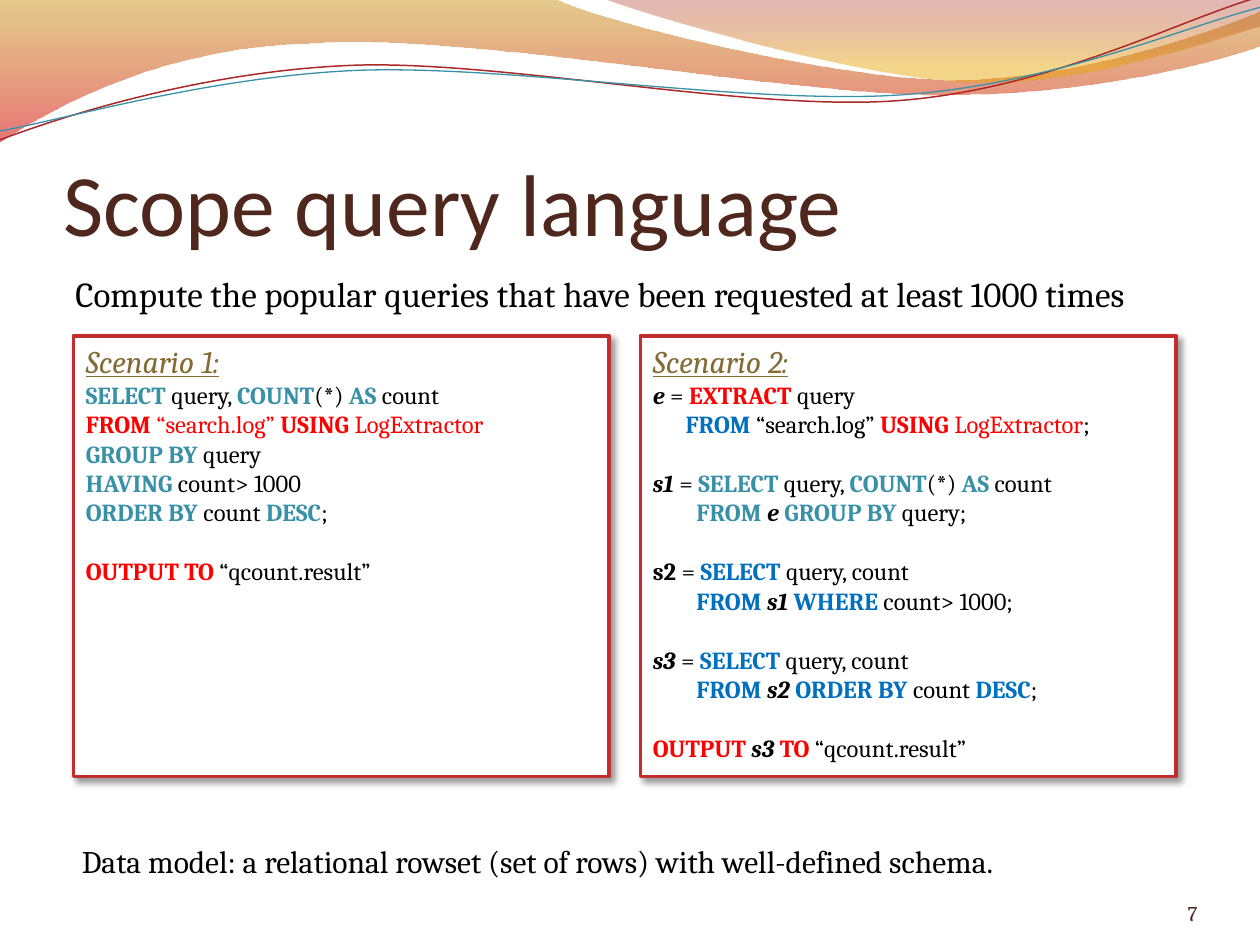
from typing import NamedTuple

from lxml.etree import Element, SubElement
from pptx import Presentation
from pptx.dml.color import RGBColor
from pptx.enum.shapes import MSO_SHAPE
from pptx.enum.text import MSO_ANCHOR as Anchor, MSO_AUTO_SIZE as AutoSize, PP_ALIGN as Align
from pptx.oxml.ns import qn
from pptx.util import Cm, Pt

BLACK = RGBColor(0, 0, 0)
WHITE = RGBColor(0xFF, 0xFF, 0xFF)
BROWN = RGBColor(0x4F, 0x27, 0x1C)
DARK_BROWN = RGBColor(0x4B, 0x25, 0x1B)
OLIVE = RGBColor(0x83, 0x6B, 0x33)
TEAL = RGBColor(0x38, 0x91, 0xA7)
BLUE = RGBColor(0x00, 0x70, 0xC0)
RED = RGBColor(0xFF, 0, 0)
BORDER_RED = RGBColor(0xC3, 0x2D, 0x2E)
LINE_RED = RGBColor(0xAC, 0x28, 0x29)
GOLD = RGBColor(0xC3, 0x8B, 0x00)
SCARLET = RGBColor(0xD6, 0x03, 0x05)
MAROON = RGBColor(0xA1, 0x11, 0x12)
AMBER = RGBColor(0xE9, 0xA6, 0x00)

SERIF, SANS = "Cambria", "Calibri"
LINE_GAP = Pt(16.8)  # one empty code line


class Style(NamedTuple):
    color: RGBColor = BLACK
    bold: bool = False
    italic: bool = False


class Statement(NamedTuple):
    """Lines of (text, Style) pairs; lines after the first are indented, in cm."""
    lines: list
    hanging: float = 0
    gap: bool = True


class Stop(NamedTuple):
    position: float
    color: RGBColor
    opacity: int


class Wave(NamedTuple):
    """Points in cm; a segment of one point is straight, of three a Bézier curve."""
    start: tuple
    segments: list
    stops: tuple = ()
    line: RGBColor | None = None
    width: float = 0


PLAIN, NAME, LABEL = Style(), Style(bold=True, italic=True), Style(bold=True)
TEAL_KEY, BLUE_KEY, RED_KEY = Style(TEAL, True), Style(BLUE, True), Style(RED, True)
RED_TEXT = Style(RED)

WAVES = [
    Wave((0, 0), [
        [(11.18, -0.03)],
        [(12.09, 0.43), (16.87, 1.6), (19.25, 1.6)],
        [(21.67, 1.6), (24.33, 0.66), (25.4, 0.23)],
        [(25.43, 0.91)],
        [(24.97, 1.12), (22.1, 1.93), (18.95, 1.91)],
        [(15.8, 1.91), (9.7, 0.71), (6.53, 0.86)],
        [(3.28, 0.91), (1.17, 2.11), (-0.03, 2.87)],
    ], stops=(Stop(0, GOLD, 45), Stop(1, SCARLET, 55))),
    Wave((12.17, -0.03), [
        [(12.93, 0.28), (17.32, 1.57), (19.53, 1.65)],
        [(21.74, 1.75), (24.41, 0.81), (25.4, 0.53)],
        [(25.4, 0)],
    ], stops=(Stop(0, MAROON, 30), Stop(0.8, AMBER, 45))),
    Wave((0, 2.82), [
        [(1.22, 2.36), (4.01, 1.45), (7.04, 1.32)],
        [(10.03, 1.19), (15.06, 2.26), (18.11, 2.03)],
        [(21.16, 1.8), (23.83, 0.38), (25.35, -0.05)],
    ], line=LINE_RED, width=0.85),
    Wave((0, 2.64), [
        [(1.19, 2.44), (4.17, 1.55), (7.19, 1.42)],
        [(10.24, 1.3), (15.16, 2.13), (18.21, 1.91)],
        [(21.23, 1.7), (23.9, 0.53), (25.4, 0.15)],
    ], line=TEAL, width=0.75),
]

SELECT_COUNT = [("SELECT", TEAL_KEY), (" query, ", PLAIN), ("COUNT", TEAL_KEY),
                ("(*) ", PLAIN), ("AS", TEAL_KEY), (" count", PLAIN)]
SELECT_QUERY = [(" = ", PLAIN), ("SELECT", BLUE_KEY), (" query, count", PLAIN)]
RESULT_FILE = "“qcount.result”"

SCENARIOS = {
    "Scenario 1:": [
        Statement([
            SELECT_COUNT,
            [("FROM", RED_KEY), (" “search.log” ", RED_TEXT),
             ("USING ", RED_KEY), ("LogExtractor", RED_TEXT)],
            [("GROUP BY", TEAL_KEY), (" query", PLAIN)],
            [("HAVING", TEAL_KEY), (" count> 1000", PLAIN)],
            [("ORDER BY ", TEAL_KEY), ("count ", PLAIN), ("DESC", TEAL_KEY), (";", PLAIN)],
        ], gap=False),
        Statement([[("OUTPUT TO ", RED_KEY), (RESULT_FILE, PLAIN)]]),
    ],
    "Scenario 2:": [
        Statement([
            [("e", NAME), (" = ", PLAIN), ("EXTRACT", RED_KEY), (" query", PLAIN)],
            [("FROM", BLUE_KEY), (" “search.log” ", PLAIN), ("USING ", RED_KEY),
             ("LogExtractor", RED_TEXT), (";", PLAIN)],
        ], hanging=0.66, gap=False),
        Statement([
            [("s1 ", NAME), ("= ", PLAIN), *SELECT_COUNT],
            [("FROM ", TEAL_KEY), ("e ", NAME), ("GROUP BY", TEAL_KEY), (" query;", PLAIN)],
        ], hanging=0.88),
        Statement([
            [("s2", LABEL), *SELECT_QUERY],
            [("FROM ", BLUE_KEY), ("s1", NAME), (" WHERE", BLUE_KEY), (" count> 1000;", PLAIN)],
        ], hanging=0.88),
        Statement([
            [("s3", NAME), *SELECT_QUERY],
            [("FROM ", BLUE_KEY), ("s2 ", NAME), ("ORDER BY", BLUE_KEY), (" count ", PLAIN),
             ("DESC", BLUE_KEY), (";", PLAIN)],
        ], hanging=0.88),
        Statement([[("OUTPUT ", RED_KEY), ("s3 ", NAME), ("TO", RED_KEY),
                    (" " + RESULT_FILE, PLAIN)]]),
    ],
}


def draw_wave(shapes, wave: Wave) -> None:
    builder = shapes.build_freeform(*(Cm(v) for v in wave.start))
    ends = [segment[-1] for segment in wave.segments]
    builder.add_line_segments([(Cm(x), Cm(y)) for x, y in ends], close=bool(wave.stops))
    band = builder.convert_to_shape()
    # Bend the segments that have control points
    for step, segment in zip(list(band._element.iter(qn("a:lnTo"))), wave.segments):
        if len(segment) == 3:
            step.tag = qn("a:cubicBezTo")
            for index, (x, y) in enumerate(segment[:2]):
                step.insert(index, Element(qn("a:pt"), x=str(Cm(x) - band.left),
                                           y=str(Cm(y) - band.top)))
    band.shadow.inherit = False
    if not wave.stops:
        band.fill.background()
        band.line.color.rgb = wave.line
        band.line.width = Pt(wave.width)
        return
    band.line.fill.background()
    band.fill.gradient()
    band.fill.gradient_angle = 270
    for target, stop in zip(band.fill.gradient_stops, wave.stops):
        target.position = stop.position
        target.color.rgb = stop.color
    for color, stop in zip(band._element.spPr.iter(qn("a:srgbClr")), wave.stops):
        SubElement(color, qn("a:alpha"), val=str(stop.opacity * 1000))


def set_font(paragraph, size: float, color: RGBColor = BLACK, name: str = SERIF) -> None:
    font = paragraph.font
    font.name, font.size, font.color.rgb = name, Pt(size), color


def add_text(shapes, box: tuple, text: str, size: float, color: RGBColor = BLACK):
    frame = shapes.add_textbox(*(Cm(v) for v in box)).text_frame
    frame.word_wrap = True
    frame.text = text
    set_font(frame.paragraphs[0], size, color)
    return frame


def add_statement(frame, statement: Statement) -> None:
    code = frame.add_paragraph()
    code.alignment = Align.LEFT
    code.space_before = LINE_GAP if statement.gap else Pt(0)
    set_font(code, 14)
    indent = Cm(statement.hanging)
    properties = code._p.get_or_add_pPr()
    properties.set("marL", str(indent))
    properties.set("indent", str(-indent))
    for index, line in enumerate(statement.lines):
        if index:
            code.add_line_break()
        for text, style in line:
            run = code.add_run()
            run.text = text
            run.font.color.rgb = style.color
            run.font.bold, run.font.italic = style.bold, style.italic


def draw_scenario(shapes, left: float, heading: str, statements: list) -> None:
    panel = shapes.add_shape(MSO_SHAPE.RECTANGLE, Cm(left), Cm(6.77), Cm(10.8), Cm(8.89))
    panel.fill.solid()
    panel.fill.fore_color.rgb = WHITE
    panel.line.color.rgb = BORDER_RED
    panel.line.width = Pt(2)
    # Soft shadow to the lower right
    panel.shadow.inherit = False
    effects = panel._element.spPr.find(qn("a:effectLst"))
    shadow = SubElement(effects, qn("a:outerShdw"), blurRad=str(Pt(4)), dist=str(Pt(3)),
                        dir="2700000", algn="tl", rotWithShape="0")
    SubElement(SubElement(shadow, qn("a:srgbClr"), val="000000"), qn("a:alpha"), val="40000")

    frame = panel.text_frame
    frame.word_wrap = True
    frame.vertical_anchor = Anchor.TOP
    title = frame.paragraphs[0]
    title.text = heading
    title.alignment = Align.LEFT
    set_font(title, 18, OLIVE)
    title.font.italic = title.font.underline = True
    for statement in statements:
        add_statement(frame, statement)


def main() -> None:
    deck = Presentation()
    deck.slide_width, deck.slide_height = Cm(25.4), Cm(19.05)
    slide = deck.slides.add_slide(deck.slide_layouts[5])
    shapes = slide.shapes

    # Decorative header
    for wave in WAVES:
        draw_wave(shapes, wave)

    # Title
    title = shapes.title
    title.left, title.top, title.width, title.height = Cm(1.27), Cm(1.95), Cm(22.86), Cm(3.17)
    frame = title.text_frame
    frame.text = "Scope query language"
    frame.auto_size = AutoSize.NONE
    frame.vertical_anchor = Anchor.BOTTOM
    frame.margin_left = frame.margin_right = frame.margin_bottom = 0
    frame.paragraphs[0].alignment = Align.LEFT
    set_font(frame.paragraphs[0], 50, BROWN, SANS)

    # Task, the two scenarios and the data model
    add_text(shapes, (1.27, 5.36, 22.86, 1.2),
             "Compute the popular queries that have been requested at least 1000 times", 20)
    for column, (heading, statements) in enumerate(SCENARIOS.items()):
        draw_scenario(shapes, 1.48 + column * 11.43, heading, statements)
    data_model = add_text(
        shapes, (1.4, 16.84, 19.86, 1.02),
        "Data model: a relational rowset (set of rows) with well-defined schema.", 18)
    data_model.word_wrap = False

    # Slide number
    number = add_text(shapes, (22.02, 17.65, 2.12, 1.02), "7", 12, DARK_BROWN)
    number.vertical_anchor = Anchor.BOTTOM
    number.margin_left = number.margin_right = number.margin_top = number.margin_bottom = 0
    number.paragraphs[0].alignment = Align.RIGHT

    deck.save("out.pptx")


if __name__ == "__main__":
    main()
